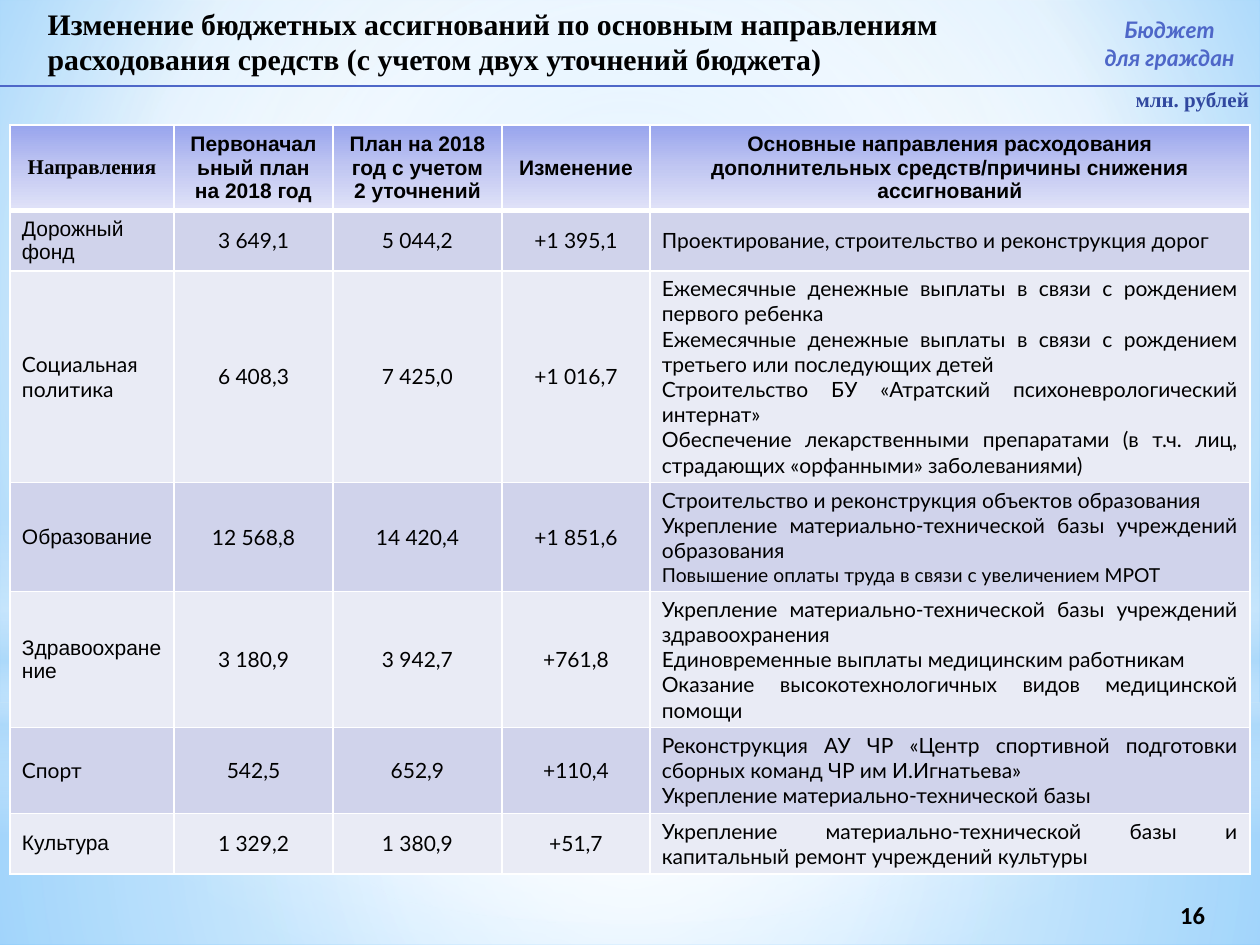
from lxml.etree import SubElement
from pptx import Presentation
from pptx.dml.color import RGBColor
from pptx.enum.shapes import MSO_CONNECTOR, MSO_SHAPE
from pptx.enum.text import MSO_ANCHOR, MSO_AUTO_SIZE, PP_ALIGN
from pptx.oxml.ns import qn
from pptx.util import Pt

SCALE = 914400 / 126
BLACK = RGBColor(0x00, 0x00, 0x00)
WHITE = RGBColor(0xFF, 0xFF, 0xFF)
BLUE = RGBColor(0x4E, 0x67, 0xC8)
NAVY = RGBColor(0x31, 0x48, 0x9F)
SKY = RGBColor(0xB4, 0xDC, 0xFA)
PALE = RGBColor(0x9E, 0xD5, 0xFF)
DEEP = RGBColor(0x5B, 0xB9, 0xFF)
DARK = RGBColor(0xD0, 0xD3, 0xEB)
LIGHT = RGBColor(0xE9, 0xEB, 0xF5)
HEAD = [(0, RGBColor(0x98, 0xA4, 0xED), 100), (50, RGBColor(0xC1, 0xC7, 0xF2), 100),
        (100, RGBColor(0xE1, 0xE3, 0xF8), 100)]
MID = (50, 50, 50, 50)
GLOWS = [
    (MSO_SHAPE.RECTANGLE, (0, 703, 1260, 242), [(0, WHITE, 91), (37, WHITE, 76), (100, SKY, 79)], MID),
    (MSO_SHAPE.RECTANGLE, (0, 0, 1260, 703), [(0, WHITE, 89), (48, WHITE, 62), (100, SKY, 79)], MID),
    (MSO_SHAPE.RECTANGLE, (0, 519, 1260, 315), [(0, WHITE, 0), (29, WHITE, 30), (45, SKY, 40),
     (55, WHITE, 26), (65, SKY, 60), (100, WHITE, 0)], None),
    (MSO_SHAPE.OVAL, (0, 220, 1260, 703), [(0, WHITE, 100), (56, WHITE, 0)], MID),
]
TITLE = ("Изменение бюджетных ассигнований по основным направлениям "
         "расходования средств (с учетом двух уточнений бюджета)")
WIDTHS = [164, 159, 169, 148, 600]
HEIGHTS = [81, 57, 211, 109, 136, 86, 60]
NAMES = ["Направления", "Первоначальный план на 2018 год", "План на 2018 год с учетом 2 уточнений",
         "Изменение", "Основные направления расходования дополнительных средств/причины снижения ассигнований"]
ROWS = [
    ["Дорожный фонд", "3 649,1", "5 044,2", "+1 395,1",
     "Проектирование, строительство и реконструкция дорог"],
    ["Социальная политика", "6 408,3", "7 425,0", "+1 016,7",
     "Ежемесячные денежные выплаты в связи с рождением первого ребенка\n"
     "Ежемесячные денежные выплаты в связи с рождением третьего или последующих детей\n"
     "Строительство БУ «Атратский психоневрологический интернат»\n"
     "Обеспечение лекарственными препаратами (в т.ч. лиц, страдающих «орфанными» заболеваниями)"],
    ["Образование", "12 568,8", "14 420,4", "+1 851,6",
     "Строительство и реконструкция объектов образования\n"
     "Укрепление материально-технической базы учреждений образования\n"
     "Повышение оплаты труда в связи с увеличением МРОТ"],
    ["Здравоохранение", "3 180,9", "3 942,7", "+761,8",
     "Укрепление материально-технической базы учреждений здравоохранения\n"
     "Единовременные выплаты медицинским работникам\n"
     "Оказание высокотехнологичных видов медицинской помощи"],
    ["Спорт", "542,5", "652,9", "+110,4",
     "Реконструкция АУ ЧР «Центр спортивной подготовки сборных команд ЧР им И.Игнатьева»\n"
     "Укрепление материально-технической базы"],
    ["Культура", "1 329,2", "1 380,9", "+51,7",
     "Укрепление материально-технической базы и капитальный ремонт учреждений культуры"],
]
LATO = ("Социальная политика", "Спорт")
SMALL = "Повышение оплаты труда в связи с увеличением МРОТ"


def px(size):
    return round(size * SCALE)


def place(box):
    return [px(size) for size in box]


def blend(fill, root, stops, focus=None):
    fill.gradient()
    grad = root.find(".//" + qn("a:gradFill"))
    for child in list(grad):
        grad.remove(child)
    grad.set("rotWithShape", "1")
    items = SubElement(grad, qn("a:gsLst"))
    for spot, color, alpha in stops:
        stop = SubElement(items, qn("a:gs"), pos=str(spot * 1000))
        tint = SubElement(stop, qn("a:srgbClr"), val=str(color))
        if alpha < 100:
            SubElement(tint, qn("a:alpha"), val=str(alpha * 1000))
    if focus:
        path = SubElement(grad, qn("a:path"), path="circle")
        SubElement(path, qn("a:fillToRect"), {k: str(v * 1000) for k, v in zip("ltrb", focus)})
    else:
        SubElement(grad, qn("a:lin"), ang="5400000", scaled="0")


def write(frame, text, face, size, color, align, bold=False, slant=False):
    frame.text = text
    frame.word_wrap = True
    for line in frame.paragraphs:
        line.alignment = align
        for run in line.runs:
            font = run.font
            font.name, font.size = face, Pt(size)
            font.bold, font.italic = bold, slant
            font.color.rgb = color


def label(slide, box, text, *style, **more):
    frame = slide.shapes.add_textbox(*place(box)).text_frame
    write(frame, text, *style, **more)
    return frame


def edge(cell, base):
    props = cell._tc.get_or_add_tcPr()
    for spot, (side, width) in enumerate([("L", 1), ("R", 1), ("T", 1), ("B", base)]):
        line = SubElement(props, qn("a:ln" + side), w=str(Pt(width)))
        fill = SubElement(line, qn("a:solidFill"))
        SubElement(fill, qn("a:srgbClr"), val=str(WHITE))
        props.insert(spot, line)


def draw_back(slide, box):
    blend(slide.background.fill, slide.element,
          [(0, PALE, 100), (60, WHITE, 100), (100, DEEP, 100)], (20, 10, 20, 60))
    left, top = box[:2]
    for kind, (x, y, wide, high), stops, focus in GLOWS:
        glow = slide.shapes.add_shape(kind, *place((left + x, top + y, wide, high)))
        glow.shadow.inherit = False
        glow.line.fill.background()
        blend(glow.fill, glow.element.spPr, stops, focus)


def draw_head(slide, box):
    left, top, width, height = box
    title = slide.shapes.title
    title.left, title.top, title.width, title.height = place((left + 35, top - 1, 961, height))
    frame = title.text_frame
    write(frame, TITLE, "Times New Roman", 17, BLACK, PP_ALIGN.LEFT, bold=True)
    frame.auto_size = MSO_AUTO_SIZE.NONE
    frame.vertical_anchor = MSO_ANCHOR.TOP
    slide.shapes._spTree.append(title.element)
    rule = slide.shapes.add_connector(
        MSO_CONNECTOR.STRAIGHT, *place((left, top + height, left + width, top + height)))
    rule.line.color.rgb = BLUE
    rule.line.width = Pt(0.75)
    SubElement(rule.element.spPr, qn("a:effectLst"))
    badge = label(slide, (left + 1085, top + 10, 169, 68), "Бюджет\nдля граждан",
                  "Lato", 13, BLUE, PP_ALIGN.CENTER, bold=True, slant=True)
    badge.word_wrap = False
    unit = label(slide, (left + 1080, top + 87, 169, 30), "млн. рублей",
                 "Times New Roman", 12, NAVY, PP_ALIGN.RIGHT, bold=True)
    unit.margin_left = unit.margin_top = unit.margin_right = unit.margin_bottom = 0


def draw_grid(slide, box):
    data = [NAMES] + ROWS
    table = slide.shapes.add_table(len(data), len(NAMES), *place(box)).table
    for col, width in zip(table.columns, WIDTHS):
        col.width = px(width)
    for r, texts in enumerate(data):
        table.rows[r].height = px(HEIGHTS[r])
        for c, text in enumerate(texts):
            cell = table.cell(r, c)
            cell.vertical_anchor = MSO_ANCHOR.MIDDLE
            cell.margin_left = cell.margin_right = px(12)
            cell.margin_top = cell.margin_bottom = px(5)
            if r == 0:
                face = "Arial" if c else "Times New Roman"
                align = PP_ALIGN.CENTER
                blend(cell.fill, cell._tc, HEAD)
            else:
                face = "Lato" if c or text in LATO else "Arial"
                align = (PP_ALIGN.LEFT, *[PP_ALIGN.CENTER] * 3, PP_ALIGN.JUSTIFY)[c]
                cell.fill.solid()
                cell.fill.fore_color.rgb = DARK if r % 2 else LIGHT
            write(cell.text_frame, text, face, 12, BLACK, align, bold=r == 0)
            for line in cell.text_frame.paragraphs:
                if line.text == SMALL:
                    line.runs[0].font.size = Pt(11)
            edge(cell, 1 if r else 3)


def draw_foot(slide, box):
    frame = label(slide, box, "16", "Calibri", 14, BLACK, PP_ALIGN.CENTER, bold=True)
    frame.vertical_anchor = MSO_ANCHOR.MIDDLE


def main():
    deck = Presentation()
    deck.slide_width, deck.slide_height = px(1260), px(945)
    slide = deck.slides.add_slide(deck.slide_layouts[5])
    draw_back(slide, (0, 0, 1260, 945))
    draw_foot(slide, (1120, 890, 145, 50))
    draw_grid(slide, (10, 125, sum(WIDTHS), sum(HEIGHTS)))
    draw_head(slide, (0, 0, 1260, 86))
    deck.save("out.pptx")


if __name__ == "__main__":
    main()
